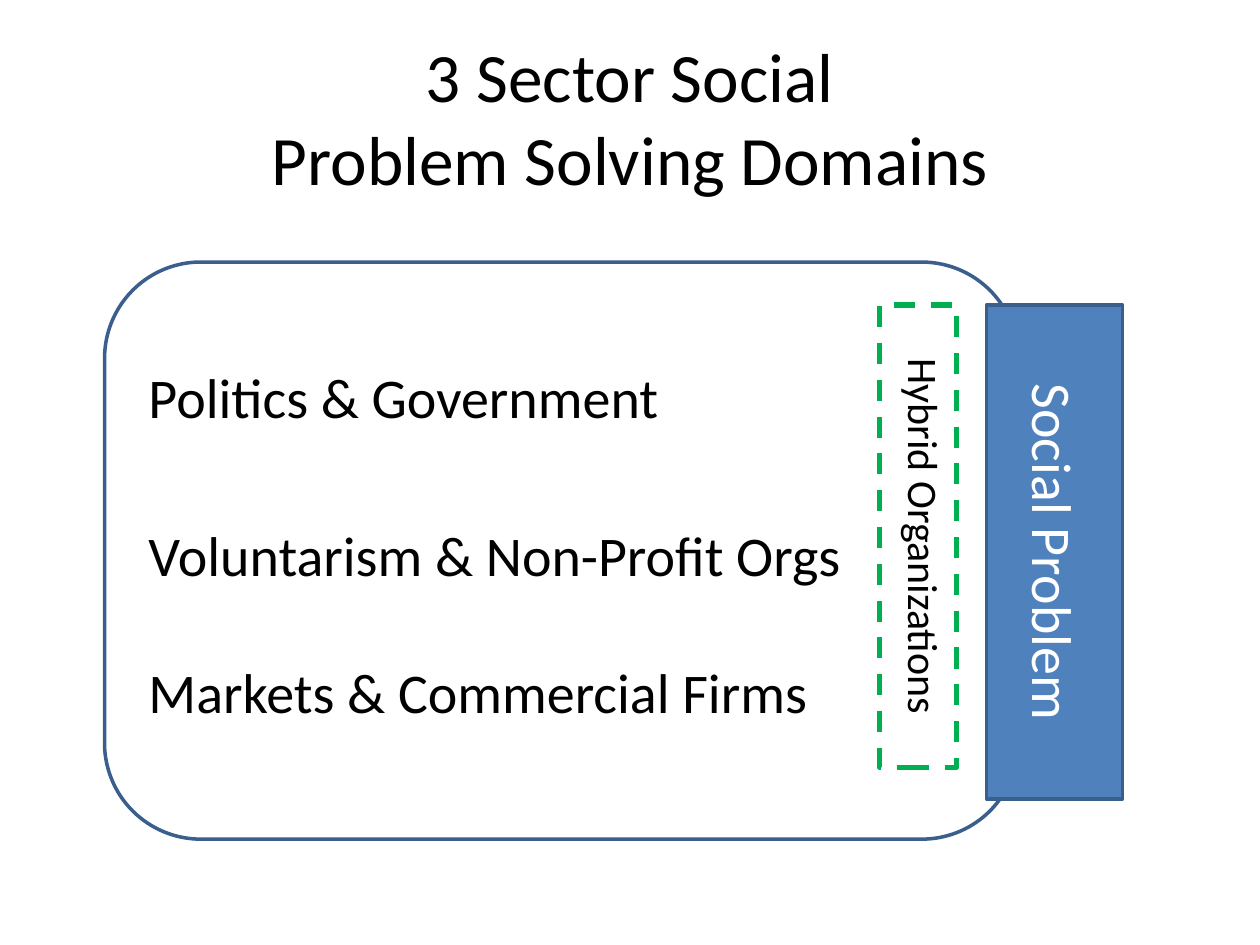
from pptx import Presentation
from pptx.dml.color import RGBColor
from pptx.enum.dml import MSO_LINE
from pptx.enum.shapes import MSO_SHAPE
from pptx.enum.text import MSO_ANCHOR, MSO_AUTO_SIZE, PP_ALIGN
from pptx.util import Inches, Pt

RECTANGLE, ROUNDED = MSO_SHAPE.RECTANGLE, MSO_SHAPE.ROUNDED_RECTANGLE
TOP, MIDDLE = MSO_ANCHOR.TOP, MSO_ANCHOR.MIDDLE
LEFT, CENTER = PP_ALIGN.LEFT, PP_ALIGN.CENTER
NO_FIT = MSO_AUTO_SIZE.NONE
DASH = MSO_LINE.DASH

BLACK, WHITE = "000000", "FFFFFF"
BLUE, NAVY, GREEN = "4F81BD", "3A5F8C", "00B050"

TITLE = "3 Sector Social\nProblem Solving Domains"
SECTORS = [
    ("Politics & Government", 2.83, 4.83),
    ("Voluntarism & Non-Profit Orgs", 4.08, 5.75),
    ("Markets & Commercial Firms", 5.17, 5.5),
]
SECTOR_LEFT, SECTOR_HEIGHT = 1.08, 0.64
DOMAIN_AREA = (0.83, 2.08, 7.25, 4.58)
PROBLEM = ("Social Problem", (7.83, 2.42, 1.08, 3.92))
HYBRID = ("Hybrid Organizations", (6.98, 2.42, 0.61, 3.67))


def color(code):
    """Turn a hex string into a colour."""
    return RGBColor.from_string(code)


def write(shape, text, size=32, ink=BLACK, align=LEFT, anchor=TOP, vertical=False):
    """Put formatted text into a shape."""
    frame = shape.text_frame
    frame.auto_size = NO_FIT
    frame.word_wrap = True
    frame.vertical_anchor = anchor
    if vertical:
        frame._txBody.bodyPr.set("vert", "vert")
    para = frame.paragraphs[0]
    para.text = text
    para.alignment = align
    for span in para.runs:
        span.font.name = "Calibri"
        span.font.size = Pt(size)
        span.font.color.rgb = color(ink)


def add_box(page, kind, place, line, width=2, fill=None, dash=None):
    """Add an outlined shape, filled only when a fill is given."""
    box = page.shapes.add_shape(kind, *map(Inches, place))
    box.shadow.inherit = False
    if fill:
        box.fill.solid()
        box.fill.fore_color.rgb = color(fill)
    else:
        box.fill.background()
    box.line.color.rgb = color(line)
    box.line.width = Pt(width)
    if dash:
        box.line.dash_style = dash
    return box


def main():
    """Build the slide and save it."""
    deck = Presentation()
    deck.slide_width, deck.slide_height = Inches(10), Inches(7.5)
    page = deck.slides.add_slide(deck.slide_layouts[5])

    title = page.shapes.title
    title.left, title.top = Inches(0.5), Inches(0.3)
    title.width, title.height = Inches(9), Inches(1.25)
    write(title, TITLE, size=39.6, align=CENTER, anchor=MIDDLE)

    add_box(page, ROUNDED, DOMAIN_AREA, NAVY)

    text, place = PROBLEM
    problem = add_box(page, RECTANGLE, place, NAVY, fill=BLUE)
    write(problem, text, ink=WHITE, align=CENTER, anchor=MIDDLE, vertical=True)

    for text, top, width in SECTORS:
        place = (SECTOR_LEFT, top, width, SECTOR_HEIGHT)
        write(page.shapes.add_textbox(*map(Inches, place)), text)

    text, place = HYBRID
    hybrid = add_box(page, RECTANGLE, place, GREEN, width=3, dash=DASH)
    write(hybrid, text, size=24, align=CENTER, vertical=True)

    deck.save("out.pptx")


if __name__ == "__main__":
    main()
